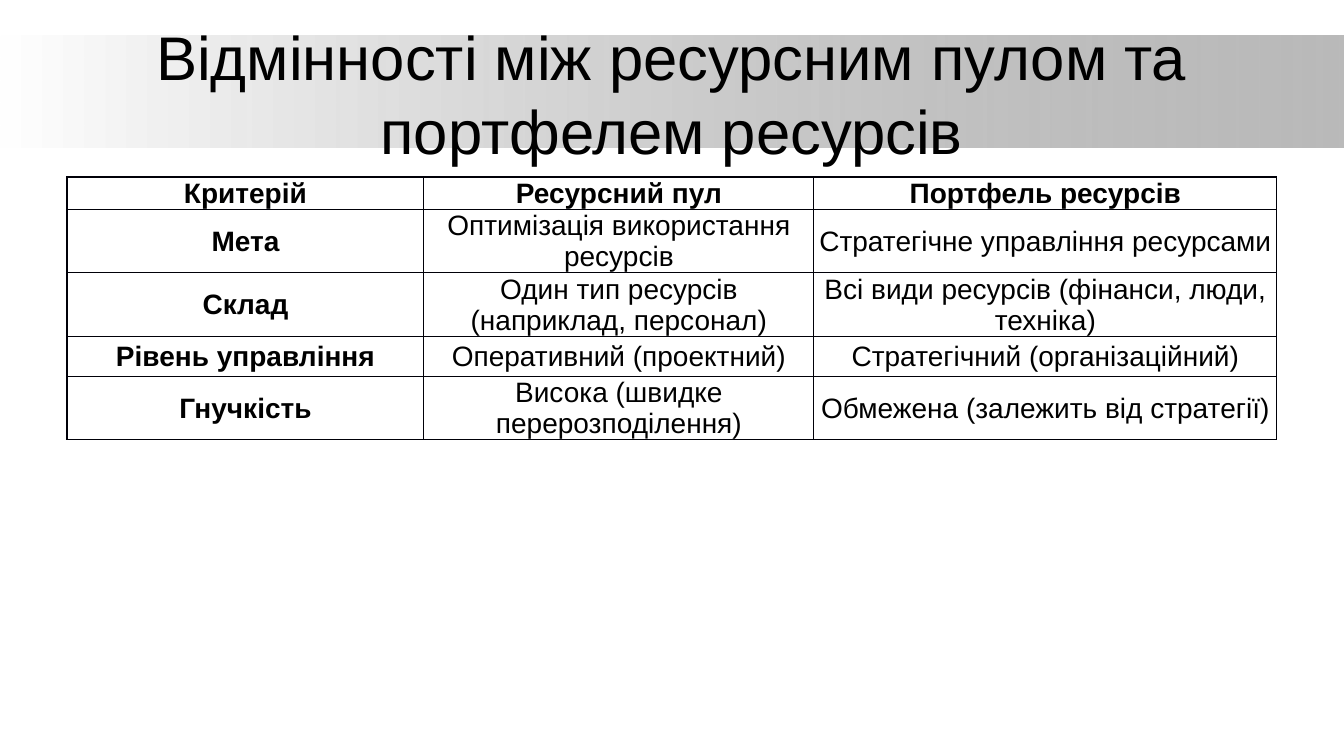
from dataclasses import dataclass

from lxml.etree import SubElement
from pptx import Presentation
from pptx.dml.color import RGBColor
from pptx.enum.shapes import MSO_SHAPE as Shape
from pptx.enum.text import MSO_ANCHOR as Anchor, MSO_AUTO_SIZE as AutoSize, PP_ALIGN as Align
from pptx.oxml.ns import qn
from pptx.slide import Slide
from pptx.table import _Cell as Cell
from pptx.text.text import TextFrame
from pptx.util import Emu, Pt

SLIDE_WIDTH, SLIDE_HEIGHT = 1344, 756
EMU_PER_PX = 12192000 / SLIDE_WIDTH


@dataclass(frozen=True)
class Theme:
    font: str = "Arial"
    title_size: int = 44
    table_size: int = 20
    ink: str = "000000"
    paper: str = "FFFFFF"
    band_end: str = "808080"
    band_opacity: int = 54
    border: str = "000008"
    outer_border: float = 1
    inner_border: float = 0.75


@dataclass(frozen=True)
class Box:
    left: int
    top: int
    width: int
    height: int

    def emu(self) -> tuple[Emu, Emu, Emu, Emu]:
        return px(self.left), px(self.top), px(self.width), px(self.height)


@dataclass(frozen=True)
class Criterion:
    name: str
    pool: str
    portfolio: str
    height: int

    def texts(self) -> tuple[str, str, str]:
        return self.name, self.pool, self.portfolio


THEME = Theme()
BAND = Box(0, 36, SLIDE_WIDTH, 112)
HEADING = Box(67, 30, 1210, 126)
COLUMN_WIDTHS = (357, 390, 463)
CRITERIA = (
    Criterion("Критерій", "Ресурсний пул", "Портфель ресурсів", 32),
    Criterion("Мета", "Оптимізація використання ресурсів",
              "Стратегічне управління ресурсами", 63),
    Criterion("Склад", "Один тип ресурсів (наприклад, персонал)",
              "Всі види ресурсів (фінанси, люди, техніка)", 63),
    Criterion("Рівень управління", "Оперативний (проектний)",
              "Стратегічний (організаційний)", 40),
    Criterion("Гнучкість", "Висока (швидке перерозподілення)",
              "Обмежена (залежить від стратегії)", 63),
)
COMPARISON = Box(67, 177, sum(COLUMN_WIDTHS), sum(c.height for c in CRITERIA))


def px(length: int) -> Emu:
    return Emu(round(length * EMU_PER_PX))


def write(frame: TextFrame, text: str, size: int, bold: bool = False) -> None:
    frame.text = text
    frame.word_wrap = True
    paragraph = frame.paragraphs[0]
    paragraph.alignment = Align.CENTER
    font = paragraph.runs[0].font
    font.name, font.size, font.bold = THEME.font, Pt(size), bold
    font.color.rgb = RGBColor.from_string(THEME.ink)


def draw_band(slide: Slide) -> None:
    band = slide.shapes.add_shape(Shape.RECTANGLE, *BAND.emu())
    band.shadow.inherit = False
    band.line.fill.background()
    band.fill.gradient()
    band.fill.gradient_angle = 0
    for stop, color in zip(band.fill.gradient_stops, (THEME.paper, THEME.band_end)):
        stop.color.rgb = RGBColor.from_string(color)
    end_color = list(band._element.spPr.iter(qn("a:srgbClr")))[-1]
    SubElement(end_color, qn("a:alpha"), val=str(THEME.band_opacity * 1000))
    slide.shapes._spTree.insert(2, band._element)


def draw_heading(slide: Slide, text: str) -> None:
    heading = slide.shapes.title
    heading.left, heading.top, heading.width, heading.height = HEADING.emu()
    write(heading.text_frame, text, THEME.title_size)
    heading.text_frame.auto_size = AutoSize.NONE
    heading.text_frame.vertical_anchor = Anchor.MIDDLE


def draw_borders(cell: Cell, row: int, column: int) -> None:
    outer_sides = {
        "a:lnL": column == 0,
        "a:lnR": column == len(COLUMN_WIDTHS) - 1,
        "a:lnT": row == 0,
        "a:lnB": row == len(CRITERIA) - 1,
    }
    properties = cell._tc.get_or_add_tcPr()
    for side, is_outer in outer_sides.items():
        width = Pt(THEME.outer_border if is_outer else THEME.inner_border)
        line = SubElement(properties, qn(side), w=str(width))
        SubElement(SubElement(line, qn("a:solidFill")), qn("a:srgbClr"), val=THEME.border)


def draw_comparison(slide: Slide) -> None:
    comparison = slide.shapes.add_table(
        len(CRITERIA), len(COLUMN_WIDTHS), *COMPARISON.emu()).table
    comparison.first_row = comparison.horz_banding = False
    for column, width in zip(comparison.columns, COLUMN_WIDTHS):
        column.width = px(width)
    for row, criterion in enumerate(CRITERIA):
        comparison.rows[row].height = px(criterion.height)
        for column, text in enumerate(criterion.texts()):
            cell = comparison.cell(row, column)
            draw_borders(cell, row, column)
            cell.fill.solid()
            cell.fill.fore_color.rgb = RGBColor.from_string(THEME.paper)
            cell.margin_left = cell.margin_right = cell.margin_top = px(1)
            cell.margin_bottom = 0
            cell.vertical_anchor = Anchor.MIDDLE
            write(cell.text_frame, text, THEME.table_size, bold=row == 0 or column == 0)


def main() -> None:
    deck = Presentation()
    deck.slide_width, deck.slide_height = px(SLIDE_WIDTH), px(SLIDE_HEIGHT)
    slide = deck.slides.add_slide(deck.slide_layouts.get_by_name("Title Only"))
    draw_band(slide)
    draw_heading(slide, "Відмінності між ресурсним пулом та портфелем ресурсів")
    draw_comparison(slide)
    deck.save("out.pptx")


if __name__ == "__main__":
    main()
